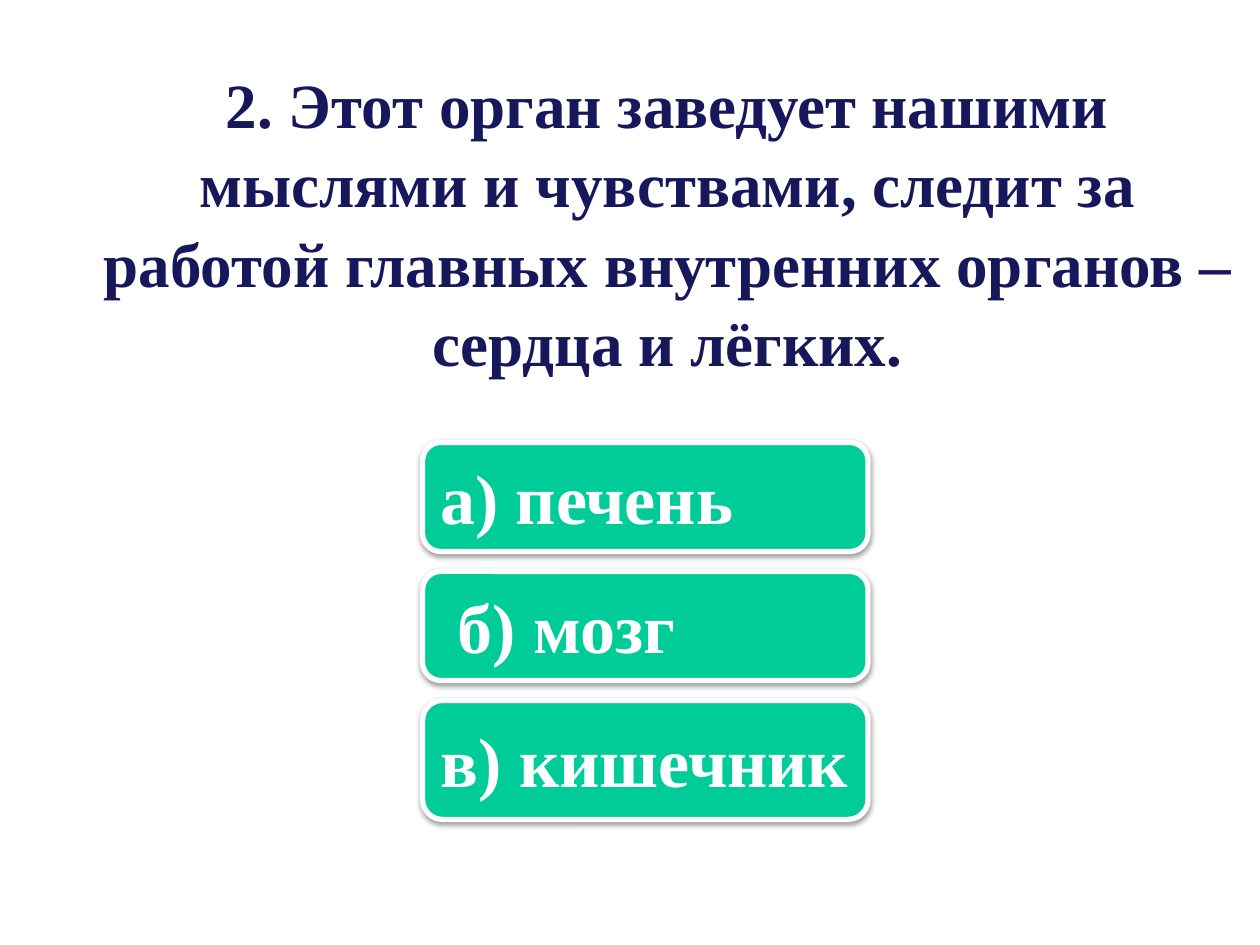
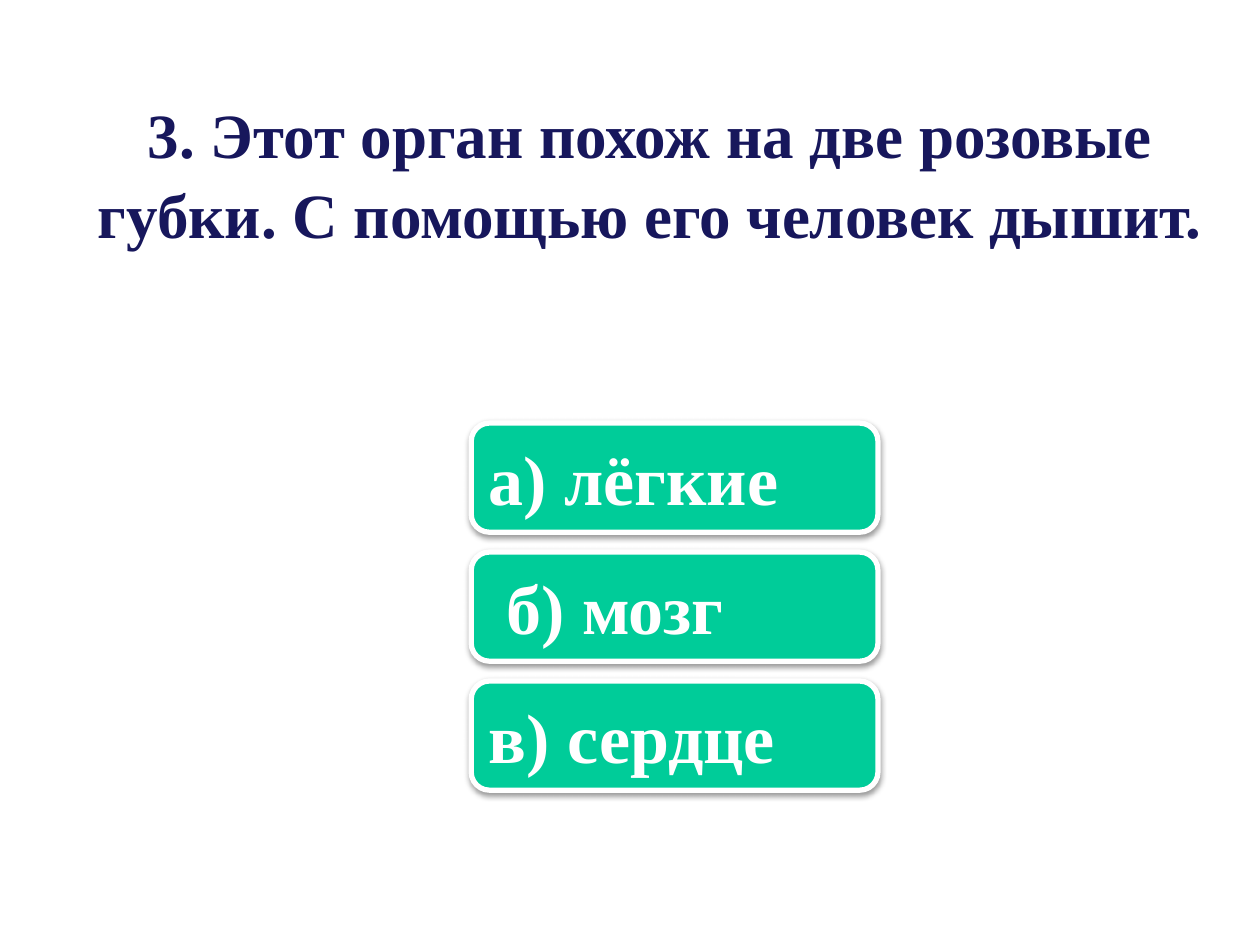
"""Builds two quiz slides about the organs of the human body."""
import pptx
import pptx.util
import pptx.dml.color
import pptx.enum.shapes
import pptx.enum.text
import pptx.oxml
from dataclasses import dataclass
from pptx.oxml.ns import nsdecls

Cm, Pt = pptx.util.Cm, pptx.util.Pt
RGB = pptx.dml.color.RGBColor
ANCHOR, ALIGN = pptx.enum.text.MSO_ANCHOR, pptx.enum.text.PP_ALIGN

QUIZ = [
    {"question": "2. Этот орган заведует нашими мыслями и чувствами, следит за "
                 "работой главных внутренних органов – сердца и лёгких.",
     "box": (1.5, 1.12, 23.9, 6.4),
     "answers": ["а) печень", " б) мозг", "в) кишечник"],
     "buttons": (8.52, 8.92, 8.98), "heights": (2.2, 2.2, 2.4)},
    {"question": "3. Этот орган похож на две розовые губки. "
                 "С помощью его человек дышит.",
     "box": (1.7, 1.73, 22.8, 3.32),
     "answers": ["а) лёгкие", " б) мозг", "в) сердце"],
     "buttons": (9.5, 8.53, 8.2), "heights": (2.2, 2.2, 2.2)},
]
BUTTON_STEP = 2.6


@dataclass(frozen=True)
class Theme:
    font: str = "Times New Roman"
    ink: RGB = RGB.from_string("17175C")
    button: RGB = RGB.from_string("00CC99")
    light: RGB = RGB.from_string("FFFFFF")
    question_size: int = 36
    answer_size: int = 40
    question_spacing: float = 1.05
    border: int = 3


THEME = Theme()
SHADOW = (f'<a:effectLst {nsdecls("a")}>'
          '<a:outerShdw blurRad="40000" dist="20000" dir="5400000" rotWithShape="0">'
          '<a:srgbClr val="000000"><a:alpha val="38000"/></a:srgbClr>'
          '</a:outerShdw></a:effectLst>')


def write(sp, text, size, color, align, anchor):
    tf = sp.text_frame
    tf.word_wrap = True
    tf.auto_size = pptx.enum.text.MSO_AUTO_SIZE.NONE
    tf.vertical_anchor = anchor
    p = tf.paragraphs[0]
    p.alignment = align
    r = p.add_run()
    r.text = text
    r.font.name, r.font.size, r.font.bold = THEME.font, Pt(size), True
    r.font.color.rgb = color
    return p


def add_question(s, text, box):
    sp = s.shapes.title
    sp.left, sp.top, sp.width, sp.height = map(Cm, box)
    p = write(sp, text, THEME.question_size, THEME.ink, ALIGN.CENTER, ANCHOR.TOP)
    p.line_spacing = THEME.question_spacing


def add_answer(s, text, box):
    sp = s.shapes.add_shape(pptx.enum.shapes.MSO_SHAPE.ROUNDED_RECTANGLE, *map(Cm, box))
    sp.fill.solid()
    sp.fill.fore_color.rgb = THEME.button
    sp.line.color.rgb = THEME.light
    sp.line.width = Pt(THEME.border)
    sp._element.spPr.append(pptx.oxml.parse_xml(SHADOW))
    write(sp, text, THEME.answer_size, THEME.light, ALIGN.LEFT, ANCHOR.MIDDLE)


def main():
    prs = pptx.Presentation()
    prs.slide_width, prs.slide_height = Cm(25.4), Cm(19.05)
    for item in QUIZ:
        s = prs.slides.add_slide(prs.slide_layouts.get_by_name("Title Only"))
        add_question(s, item["question"], item["box"])
        left, top, width = item["buttons"]
        for i, (text, height) in enumerate(zip(item["answers"], item["heights"])):
            add_answer(s, text, (left, top + i * BUTTON_STEP, width, height))
    prs.save("out.pptx")


if __name__ == "__main__":
    main()
